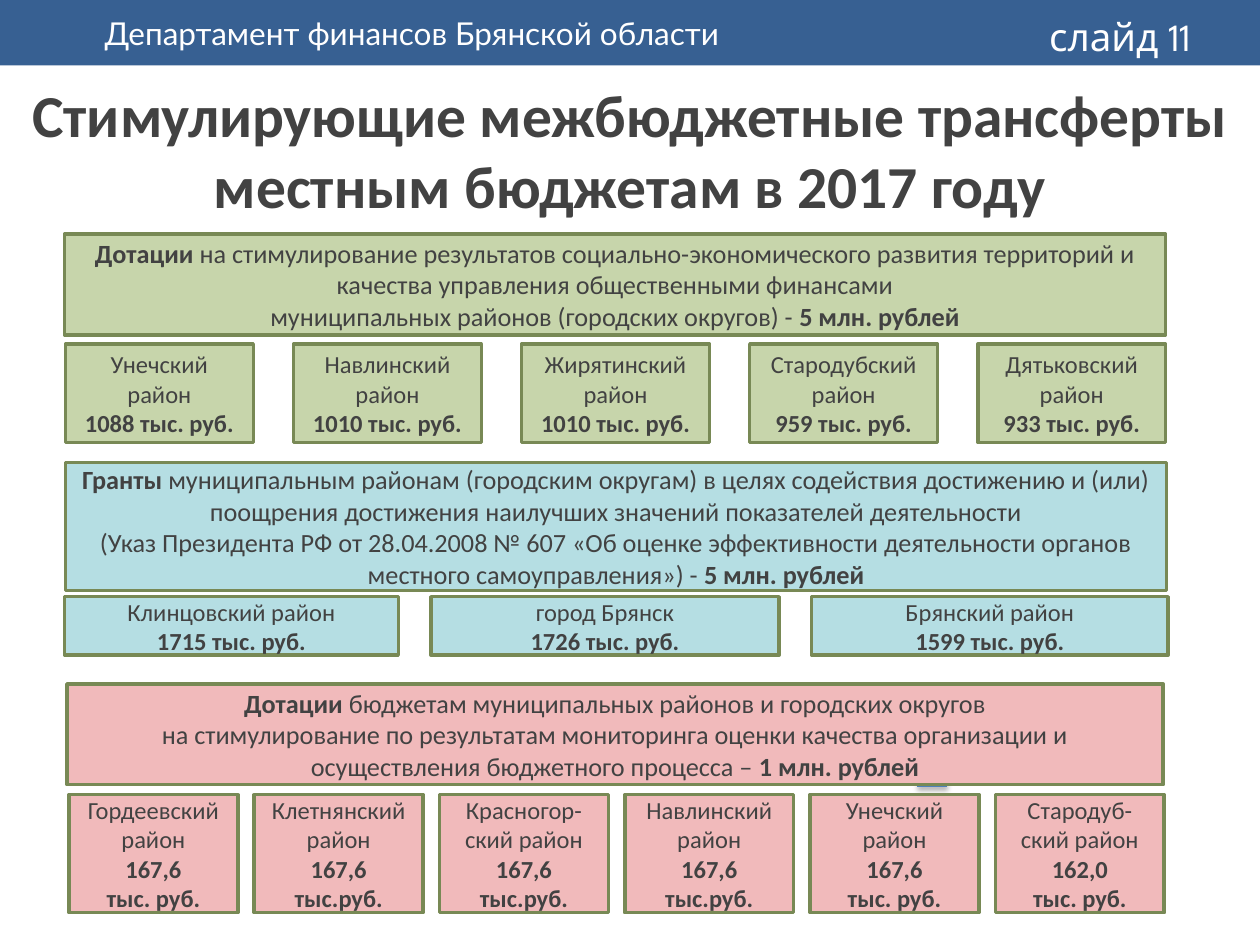
from dataclasses import dataclass

from lxml import etree
from pptx import Presentation
from pptx.dml.color import RGBColor
from pptx.enum.shapes import MSO_CONNECTOR, MSO_SHAPE
from pptx.enum.text import MSO_ANCHOR, PP_ALIGN
from pptx.oxml import parse_xml
from pptx.util import Cm, Pt

RECT = MSO_SHAPE.RECTANGLE
LINE = MSO_CONNECTOR.STRAIGHT
MID = MSO_ANCHOR.MIDDLE
MEAN = PP_ALIGN.CENTER
LEFT = PP_ALIGN.LEFT
NS = "http://schemas.openxmlformats.org/drawingml/2006/main"


@dataclass(frozen=True)
class Theme:
    bar: str = "376092"
    white: str = "FFFFFF"
    ink: str = "424242"
    edge: str = "788955"
    mark: str = "4F81BD"
    green: str = "C7D5AB"
    blue: str = "B5DEE3"
    pink: str = "F1BABB"
    font: str = "Calibri"
    head_font: str = "Lato"
    page_font: str = "League Spartan"
    title: int = 34
    page: int = 22
    head: int = 18
    lead: int = 15
    card: int = 14


T = Theme()

# Each section: fill, band box, band text, row box, gap, width shares, cards.
# Boxes are left, top, width, height in cm; ** switches bold on and off.
PARTS = [
    (T.green, (1.3, 4.72, 22.2, 2.03), [
        "**Дотации **на стимулирование результатов социально-экономического "
        "развития территорий и качества управления общественными финансами",
        "муниципальных районов (городских округов) - **5 млн. рублей**"],
     (1.32, 6.94, 22.18, 1.98), 0.81, [1] * 5, [
        ["Унечский", "район", "**1088 тыс. руб.**"],
        ["Навлинский", "район", "**1010 тыс. руб.**"],
        ["Жирятинский район", "**1010 тыс. руб.**"],
        ["Стародубский район", "**959 тыс. руб.**"],
        ["Дятьковский район", "**933 тыс. руб.**"]]),
    (T.blue, (1.32, 9.32, 22.2, 2.59), [
        "**Гранты **муниципальным районам (городским округам) в целях "
        "содействия достижению и (или) поощрения достижения наилучших "
        "значений показателей деятельности",
        "(Указ Президента РФ от 28.04.2008 № 607 «Об оценке эффективности "
        "деятельности органов местного самоуправления») - **5 млн. рублей**"],
     (1.3, 12.03, 22.25, 1.18), 0.66, [2.65, 2.76, 2.83], [
        ["Клинцовский район", "**1715 тыс. руб.**"],
        ["город Брянск", "**1726 тыс. руб.**"],
        ["Брянский район", "**1599 тыс. руб.**"]]),
    (T.pink, (1.35, 13.79, 22.1, 2.03), [
        "**Дотации **бюджетам муниципальных районов и городских округов",
        "на стимулирование по результатам мониторинга оценки качества "
        "организации и",
        "осуществления бюджетного процесса – **1 млн. рублей**"],
     (1.39, 16.02, 22.08, 2.38), 0.33, [1] * 6, [
        ["Гордеевский район", "**167,6**", "**тыс. руб.**"],
        ["Клетнянский район", "**167,6**", "**тыс.руб.**"],
        ["Красногор-ский район", "**167,6 тыс.руб.**"],
        ["Навлинский район", "**167,6 тыс.руб.**"],
        ["Унечский район", "**167,6**", "**тыс. руб.**"],
        ["Стародуб-ский район **162,0**", "**тыс. руб.**"]]),
]


def tint(hue):
    return RGBColor.from_string(hue)


def write(frame, lines, size, hue, font=T.font, align=MEAN):
    frame.word_wrap = True
    for i, line in enumerate(lines):
        para = frame.paragraphs[0] if i == 0 else frame.add_paragraph()
        para.alignment = align
        para.font.name, para.font.size = font, Pt(size)
        para.font.color.rgb = tint(hue)
        for k, text in enumerate(line.split("**")):
            if text:
                run = para.add_run()
                run.text = text
                run.font.bold = k % 2 == 1


def block(slide, box, fill, edge=None):
    shape = slide.shapes.add_shape(RECT, *map(Cm, box))
    shape.shadow.inherit = False
    shape.fill.solid()
    shape.fill.fore_color.rgb = tint(fill)
    if edge:
        shape.line.color.rgb = tint(edge)
        shape.line.width = Pt(2)
    else:
        shape.line.fill.background()
    shape.text_frame.vertical_anchor = MID
    return shape


def header(slide, box):
    left, top, width, high = box
    frame = block(slide, box, T.bar).text_frame
    frame.margin_left = Cm(2.11)
    write(frame, ["Департамент финансов Брянской области"],
          T.head, T.white, T.head_font, LEFT)
    page = slide.shapes.add_textbox(
        Cm(left + width - 4.5), Cm(top + 0.13), Cm(4.19), Cm(high - 0.13))
    write(page.text_frame, ["слайд 11"], T.page, T.white, T.page_font, LEFT)


def heading(slide, box):
    title = slide.shapes.title
    title.left, title.top, title.width, title.height = map(Cm, box)
    title.text_frame.vertical_anchor = MID
    write(title.text_frame, ["**Стимулирующие межбюджетные трансферты "
                             "местным бюджетам в 2017 году**"],
          T.title, T.ink)


def dash(slide, left, top, width):
    line = slide.shapes.add_connector(
        LINE, Cm(left), Cm(top), Cm(left + width), Cm(top))
    line.line.color.rgb = tint(T.mark)
    line.line.width = Pt(3)
    fx = etree.SubElement(line._element.spPr, f"{{{NS}}}effectLst")
    fx.append(parse_xml(
        f'<a:outerShdw xmlns:a="{NS}" blurRad="{Pt(3.1)}" dist="{Pt(1.8)}" '
        'dir="5400000" rotWithShape="0"><a:srgbClr val="000000">'
        '<a:alpha val="35000"/></a:srgbClr></a:outerShdw>'))


def cards(slide, box, fill, gap, shares, texts):
    left, top, width, high = box
    unit = (width - gap * (len(texts) - 1)) / sum(shares)
    for share, lines in zip(shares, texts):
        card = block(slide, (left, top, unit * share, high), fill, T.edge)
        write(card.text_frame, lines, T.card, T.ink)
        left += unit * share + gap


def section(slide, fill, band, lead, row, gap, shares, texts):
    shape = block(slide, band, fill, T.edge)
    write(shape.text_frame, lead, T.lead, T.ink)
    cards(slide, row, fill, gap, shares, texts)


def main():
    deck = Presentation()
    deck.slide_width, deck.slide_height = Cm(25.4), Cm(19.05)
    slide = deck.slides.add_slide(deck.slide_layouts[5])
    header(slide, (0, 0, 25.4, 1.32))
    heading(slide, (0.3, 1.52, 24.8, 2.97))
    # Short dash whose shadow shows under the last band
    dash(slide, 18.49, 15.82, 0.61)
    for part in PARTS:
        section(slide, *part)
    deck.save("out.pptx")


if __name__ == "__main__":
    main()
